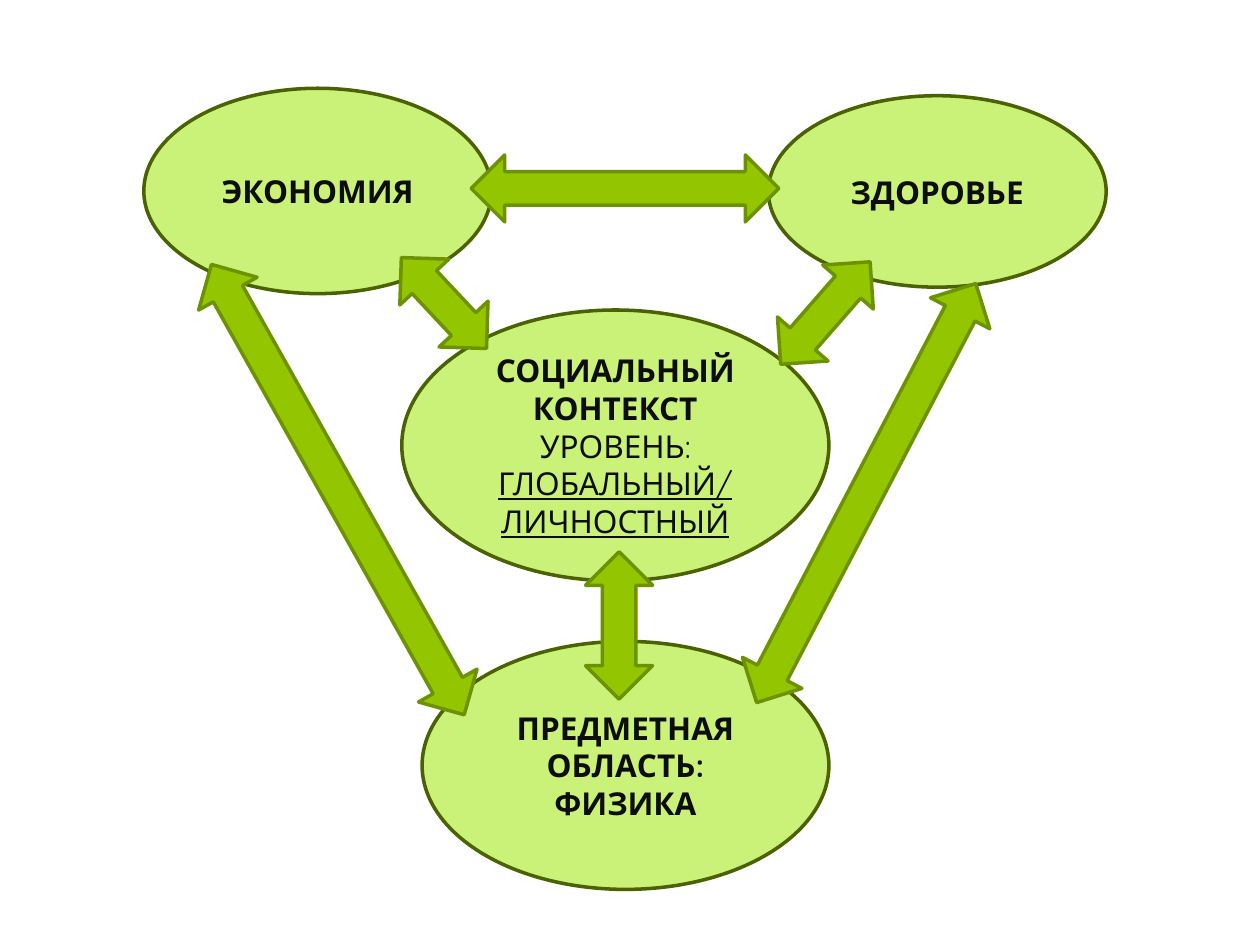
import dataclasses

import pptx
import pptx.dml.color
import pptx.enum.shapes
import pptx.enum.text
import pptx.util

Cm = pptx.util.Cm
Kind = pptx.enum.shapes.MSO_SHAPE


@dataclasses.dataclass(frozen=True)
class Theme:
    font: str = "Quicksand"
    size: int = 18
    ink: str = "0D0D0D"
    oval: str = "CAF278"
    rim: str = "4A6300"
    arrow: str = "94C600"
    edge: str = "6D9200"
    line: int = 2


THEME = Theme()

# Left, top, width, height in cm within the diagram; then text and format
OVALS = [
    (5.2, 4.47, 8.61, 5.46, [
        ("СОЦИАЛЬНЫЙ КОНТЕКСТ", {"bold": True}),
        ("УРОВЕНЬ:", {}),
        ("ГЛОБАЛЬНЫЙ/ ЛИЧНОСТНЫЙ", {"under": True}),
    ]),
    (0, 0, 7.01, 4.14, [("ЭКОНОМИЯ", {"bold": True})]),
    (12.59, 0.15, 6.81, 3.86, [("ЗДОРОВЬЕ", {"bold": True})]),
    (5.61, 11.15, 8.2, 5, [("ПРЕДМЕТНАЯ ОБЛАСТЬ: ФИЗИКА", {"bold": True})]),
]

# Centre x, centre y, length in cm within the diagram; then angle in degrees
ARROWS = [
    (6.05, 4.33, 2.51, 46.9),
    (13.74, 4.53, 2.74, 311.1),
    (9.58, 10.83, 2.97, 90),
    (3.91, 8.09, 10.41, 60.7),
    (14.56, 8.16, 9.53, 117.6),
    (9.7, 2.02, 6.2, 0),
]
THICK = 1.35


def tint(code):
    return pptx.dml.color.RGBColor.from_string(code)


def write(para, text, bold=False, under=False):
    para.alignment = pptx.enum.text.PP_ALIGN.CENTER
    run = para.add_run()
    run.text = text
    font = run.font
    font.name = THEME.font
    font.size = pptx.util.Pt(THEME.size)
    font.color.rgb = tint(THEME.ink)
    font.bold = bold
    font.underline = under


def draw(slide, kind, left, top, width, height, fill, line):
    shape = slide.shapes.add_shape(
        kind, Cm(left), Cm(top), Cm(width), Cm(height))
    shape.shadow.inherit = False
    shape.fill.solid()
    shape.fill.fore_color.rgb = tint(fill)
    shape.line.color.rgb = tint(line)
    shape.line.width = pptx.util.Pt(THEME.line)
    return shape


def add_oval(slide, left, top, width, height, lines):
    shape = draw(slide, Kind.OVAL, left, top, width, height,
                 THEME.oval, THEME.rim)
    frame = shape.text_frame
    frame.word_wrap = True
    frame.vertical_anchor = pptx.enum.text.MSO_ANCHOR.MIDDLE
    for index, (text, style) in enumerate(lines):
        para = frame.add_paragraph() if index else frame.paragraphs[0]
        write(para, text, **style)


def add_arrow(slide, x, y, length, angle):
    """Centre a double arrow on x, y and turn it by angle."""
    shape = draw(slide, Kind.LEFT_RIGHT_ARROW, x - length / 2, y - THICK / 2,
                 length, THICK, THEME.arrow, THEME.edge)
    shape.rotation = angle


def add_scheme(slide, left, top):
    """Place the linked ovals, with the arrows in front."""
    for x, y, width, height, lines in OVALS:
        add_oval(slide, left + x, top + y, width, height, lines)
    for x, y, length, angle in ARROWS:
        add_arrow(slide, left + x, top + y, length, angle)


def main():
    deck = pptx.Presentation()
    deck.slide_width, deck.slide_height = Cm(25.4), Cm(19.05)
    slide = deck.slides.add_slide(deck.slide_layouts.get_by_name("Blank"))
    add_scheme(slide, 2.9, 1.78)
    deck.save("out.pptx")


if __name__ == "__main__":
    main()
